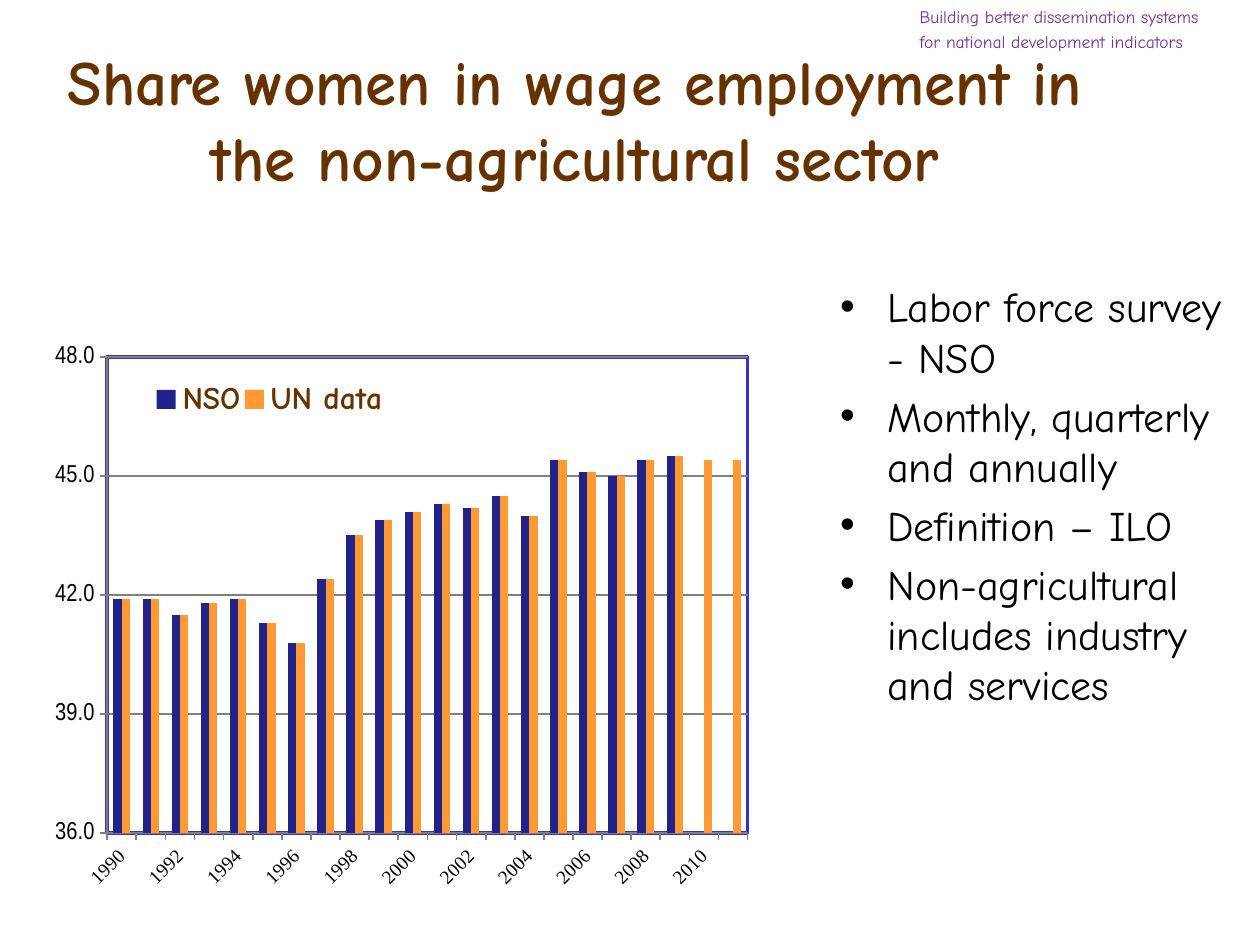
import lxml.etree as etree
import pptx
import pptx.chart.data
import pptx.dml.color
import pptx.enum.chart
import pptx.enum.text
import pptx.oxml.ns
import pptx.util

Pt = pptx.util.Pt
qn = pptx.oxml.ns.qn
PP_ALIGN = pptx.enum.text.PP_ALIGN
XL = pptx.enum.chart

BROWN, PURPLE, BLACK = "663300", "7030A0", "000000"
NAVY, ORANGE, BLUE, GRAY = "22228B", "FF9933", "3333CC", "808080"

YEARS = [str(year) for year in range(1990, 2012)]
NSO = [41.9, 41.9, 41.5, 41.8, 41.9, 41.3, 40.8, 42.4, 43.5, 43.9, 44.1,
       44.3, 44.2, 44.5, 44.0, 45.4, 45.1, 45.0, 45.4, 45.5]
SERIES = [("NSO", NSO + [None, None], NAVY),
          ("UN data", NSO + [45.4, 45.4], ORANGE)]
POINTS = ["Labor force survey - NSO", "Monthly, quarterly and annually",
          "Definition – ILO", "Non-agricultural includes industry and services"]


def rgb(color):
    return pptx.dml.color.RGBColor.from_string(color)


def style_font(font, size, color, name, bold=False):
    font.size, font.name, font.bold = Pt(size), name, bold
    font.color.rgb = rgb(color)


def style_line(line, color, width):
    line.color.rgb = rgb(color)
    line.width = Pt(width)


def set_layout(parent, index, x, y, w, h, inner=False):
    """Place a chart part by fractions of the chart's size."""
    for old in parent.findall(qn("c:layout")):
        parent.remove(old)
    layout = etree.Element(qn("c:layout"))
    manual = etree.SubElement(layout, qn("c:manualLayout"))
    values = [("layoutTarget", "inner")] if inner else []
    values += [("xMode", "edge"), ("yMode", "edge"),
               ("x", x), ("y", y), ("w", w), ("h", h)]
    for tag, value in values:
        etree.SubElement(manual, qn("c:" + tag)).set("val", str(value))
    parent.insert(index, layout)


def add_frame(plot_area, color, width):
    """Give the plot area a white fill and an outline."""
    sp_pr = etree.SubElement(plot_area, qn("c:spPr"))
    line = etree.Element(qn("a:ln"), w=str(Pt(width)))
    for parent, value in ((sp_pr, "FFFFFF"), (line, color)):
        fill = etree.SubElement(parent, qn("a:solidFill"))
        etree.SubElement(fill, qn("a:srgbClr"), val=value)
    sp_pr.append(line)


class Deck:
    font = "Comic Neue"

    def __init__(self, width, height):
        self.prs = pptx.Presentation()
        self.prs.slide_width, self.prs.slide_height = Pt(width), Pt(height)
        self.slide = self.prs.slides.add_slide(self.prs.slide_layouts[5])

    def title(self, text, x, y, w, h, size, color):
        sp = self.slide.shapes.title
        sp.left, sp.top, sp.width, sp.height = Pt(x), Pt(y), Pt(w), Pt(h)
        tf = sp.text_frame
        tf.auto_size = pptx.enum.text.MSO_AUTO_SIZE.NONE
        tf.vertical_anchor = pptx.enum.text.MSO_ANCHOR.MIDDLE
        p = tf.paragraphs[0]
        p.alignment = PP_ALIGN.CENTER
        r = p.add_run()
        r.text = text
        style_font(r.font, size, color, self.font, True)

    def text(self, lines, x, y, w, h, size, color, bullet=None):
        tf = self.slide.shapes.add_textbox(Pt(x), Pt(y), Pt(w), Pt(h)).text_frame
        tf.word_wrap = True
        for i, line in enumerate(lines):
            p = tf.paragraphs[0] if i == 0 else tf.add_paragraph()
            p.alignment = PP_ALIGN.LEFT
            p.space_before = Pt(0.2 * size if i else 0)
            if bullet:
                p_pr = p._p.get_or_add_pPr()
                p_pr.set("marL", str(Pt(27)))
                p_pr.set("indent", str(Pt(-27)))
                etree.SubElement(p_pr, qn("a:buFont"), typeface="Arial")
                etree.SubElement(p_pr, qn("a:buChar"), char=bullet)
            r = p.add_run()
            r.text = line
            style_font(r.font, size, color, self.font)

    def column_chart(self, categories, series, x, y, w, h):
        data = pptx.chart.data.CategoryChartData(number_format="0.0")
        data.categories = categories
        for name, values, _ in series:
            data.add_series(name, values)
        chart = self.slide.shapes.add_chart(
            XL.XL_CHART_TYPE.COLUMN_CLUSTERED,
            Pt(x), Pt(y), Pt(w), Pt(h), data).chart
        chart.has_title = False
        style_font(chart.font, 18, BLACK, "Times New Roman")
        plot = chart.plots[0]
        plot.gap_width, plot.overlap, plot.vary_by_categories = 150, 0, False
        for item, (_, _, color) in zip(plot.series, series):
            item.format.fill.solid()
            item.format.fill.fore_color.rgb = rgb(color)
        self.axes(chart)
        self.legend(chart)
        plot_area = chart._chartSpace.find(".//" + qn("c:plotArea"))
        set_layout(plot_area, 0, 0.08, 0.04, 0.71, 0.84, inner=True)
        add_frame(plot_area, BLUE, 2)

    def axes(self, chart):
        cat, val = chart.category_axis, chart.value_axis
        for axis, size, name in ((cat, 11, "Times New Roman"),
                                 (val, 14, "Arial Narrow")):
            axis.major_tick_mark = XL.XL_TICK_MARK.OUTSIDE
            axis.minor_tick_mark = XL.XL_TICK_MARK.NONE
            style_font(axis.tick_labels.font, size, BLACK, name)
            style_line(axis.format.line, GRAY, 1)
        val.minimum_scale, val.maximum_scale, val.major_unit = 36, 48, 3
        val.tick_labels.number_format = "0.0"
        val.tick_labels.number_format_is_linked = False
        val.has_major_gridlines = True
        style_line(val.major_gridlines.format.line, GRAY, 1)
        body = cat._element.find(qn("c:txPr")).find(qn("a:bodyPr"))
        body.set("rot", str(-45 * 60000))
        body.set("vert", "horz")
        skip = etree.Element(qn("c:tickLblSkip"), val="2")
        cat._element.find(qn("c:noMultiLvlLbl")).addprevious(skip)

    def legend(self, chart):
        chart.has_legend = True
        legend = chart.legend
        legend.position = XL.XL_LEGEND_POSITION.RIGHT
        legend.include_in_layout = False
        style_font(legend.font, 18, BROWN, self.font, True)
        set_layout(legend._element, 1, 0.13, 0.07, 0.26, 0.09)


def main():
    deck = Deck(720, 540)
    deck.column_chart(YEARS, SERIES, 20, 191, 515.5, 324)
    deck.title("Share women in wage employment in the non-agricultural sector",
               22.5, 22.5, 612, 90, 36, BROWN)
    deck.text(["Building better dissemination systems",
               "for national development indicators"],
              518.4, 0, 204.5, 45, 10, PURPLE)
    deck.text(POINTS, 473, 157, 249, 324, 24, BLACK, bullet="•")
    deck.prs.save("out.pptx")


if __name__ == "__main__":
    main()
